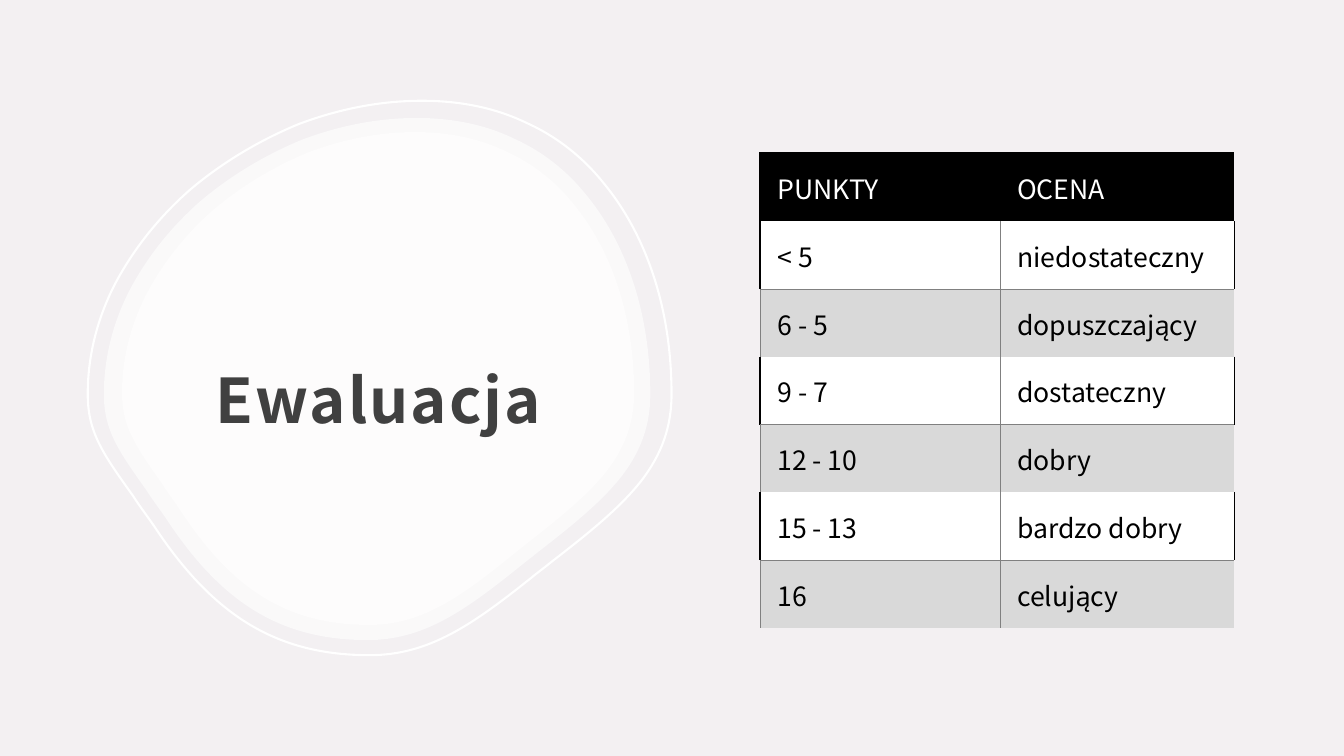
from dataclasses import dataclass

from lxml import etree
from pptx import Presentation
from pptx.dml.color import RGBColor
from pptx.enum.shapes import MSO_SHAPE
from pptx.enum.text import MSO_ANCHOR, PP_ALIGN
from pptx.oxml.ns import qn
from pptx.util import Inches, Pt

RECTANGLE = MSO_SHAPE.RECTANGLE
MIDDLE, TOP, BOTTOM = MSO_ANCHOR.MIDDLE, MSO_ANCHOR.TOP, MSO_ANCHOR.BOTTOM
CENTER, LEFT = PP_ALIGN.CENTER, PP_ALIGN.LEFT
NO_STYLE = "{2D5ABB26-0587-4C30-8999-92F81FD0307C}"


@dataclass(frozen=True)
class Theme:
    font: str = "Noto Sans CJK JP"
    background: str = "F3F0F2"
    white: str = "FFFFFF"
    black: str = "000000"
    title: str = "404040"
    band: str = "D9D9D9"
    grid: str = "808080"
    title_size: float = 44
    table_size: float = 19
    outline: float = 1.5
    hairline: float = 0.5


THEME = Theme()

SLIDE_SIZE = (13.33, 7.5)
BLOB_SIZE = (5.8, 5.5)
BLOB_START = (3.32, 0)
BLOB_CURVES = [
    ((3.7, 0), (4.05, 0.07), (4.36, 0.22)),
    ((4.65, 0.35), (4.91, 0.55), (5.12, 0.81)),
    ((5.56, 1.34), (5.8, 2.08), (5.8, 2.91)),
    ((5.8, 3.24), (5.7, 3.51), (5.5, 3.77)),
    ((5.28, 4.05), (4.95, 4.31), (4.6, 4.58)),
    ((4.54, 4.63), (4.47, 4.68), (4.41, 4.73)),
    ((3.82, 5.2), (3.39, 5.5), (2.8, 5.5)),
    ((1.9, 5.5), (1.27, 5.13), (0.68, 4.25)),
    ((0.6, 4.13), (0.52, 4.03), (0.45, 3.92)),
    ((0.15, 3.5), (0, 3.29), (0, 2.91)),
    ((0, 2.54), (0.09, 2.17), (0.27, 1.82)),
    ((0.45, 1.48), (0.7, 1.16), (1.02, 0.88)),
    ((1.34, 0.61), (1.71, 0.39), (2.1, 0.23)),
    ((2.5, 0.08), (2.91, 0), BLOB_START),
]

GRADES = [
    ("PUNKTY", "OCENA"),
    ("< 5", "niedostateczny"),
    ("6 - 5", "dopuszczający"),
    ("9 - 7", "dostateczny"),
    ("12 - 10", "dobry"),
    ("15 - 13", "bardzo dobry"),
    ("16", "celujący"),
]

THICK = (THEME.black, THEME.outline)
EDGE = (THEME.black, THEME.hairline)
THIN = (THEME.grid, THEME.hairline)
HEADER = dict(fill=THEME.black, color=THEME.white, anchor=MIDDLE,
              borders=(dict(L=THICK, T=THICK), dict(T=THICK)))
PLAIN = dict(fill=THEME.white, color=THEME.black, anchor=TOP,
             borders=(dict(L=THICK, R=THIN, B=THIN), dict(L=THIN, R=EDGE, B=THIN)))
BANDED = dict(fill=THEME.band, color=THEME.black, anchor=TOP,
              borders=(dict(L=THIN, R=THIN, T=THIN), dict(L=THIN, T=THIN)))


def rgb(value):
    return RGBColor.from_string(value)


def set_attrs(obj, values):
    for name, value in values.items():
        setattr(obj, name, value)


def paint(fill, color):
    fill.solid()
    fill.fore_color.rgb = rgb(color)


def write_text(tf, text, size, color, bold=False, **paragraph):
    p = tf.paragraphs[0]
    set_attrs(p, paragraph)
    r = p.add_run()
    r.text = text
    set_attrs(r.font, dict(name=THEME.font, size=Pt(size), bold=bold))
    r.font.color.rgb = rgb(color)
    return r


def add_backdrop(slide, box):
    sp = slide.shapes.add_shape(RECTANGLE, *map(Inches, box))
    sp.shadow.inherit = False
    paint(sp.fill, THEME.background)
    sp.line.fill.background()


def add_blob(slide, box, opacity=None):
    x, y, w, h = box

    def scaled(point):
        return Inches(point[0] * w / BLOB_SIZE[0]), Inches(point[1] * h / BLOB_SIZE[1])

    builder = slide.shapes.build_freeform(*scaled(BLOB_START))
    builder.add_line_segments([scaled(curve[-1]) for curve in BLOB_CURVES], close=True)
    sp = builder.convert_to_shape(Inches(x), Inches(y))
    for line, curve in zip(list(sp._element.iter(qn("a:lnTo"))), BLOB_CURVES):
        bezier = etree.Element(qn("a:cubicBezTo"))
        for px, py in map(scaled, curve):
            etree.SubElement(bezier, qn("a:pt"), x=str(px), y=str(py))
        line.getparent().replace(line, bezier)
    sp.shadow.inherit = False
    if opacity is None:
        sp.fill.background()
        sp.line.color.rgb = rgb(THEME.white)
        sp.line.width = Pt(THEME.outline)
    else:
        paint(sp.fill, THEME.white)
        color = sp._element.spPr.find(qn("a:solidFill")).find(qn("a:srgbClr"))
        etree.SubElement(color, qn("a:alpha"), val=str(opacity * 1000))
        sp.line.fill.background()


def add_title_badge(slide, box, text):
    x, y, w, h = box
    add_blob(slide, (x + 0.16, y + 0.17, 5.42, 5.18), opacity=60)
    add_blob(slide, box)
    add_blob(slide, (x + 0.34, y + 0.31, 5.08, 4.89), opacity=60)
    sp = slide.shapes.add_textbox(Inches(x + 0.58), Inches(y + 0.84), Inches(4.61), Inches(2.58))
    tf = sp.text_frame
    set_attrs(tf, dict(word_wrap=True, vertical_anchor=BOTTOM,
                       margin_left=Inches(0.12), margin_right=Inches(0.12),
                       margin_top=Inches(0.12), margin_bottom=Inches(0.1)))
    r = write_text(tf, text, THEME.title_size, THEME.title, bold=True,
                   alignment=CENTER, line_spacing=1.2)
    r.font._element.set("spc", "150")


def set_borders(cell, borders):
    tc_pr = cell._tc.get_or_add_tcPr()
    for side in "LRTB":
        ln = etree.SubElement(tc_pr, qn("a:ln" + side))
        if side in borders:
            color, width = borders[side]
            ln.set("w", str(Pt(width)))
            fill = etree.SubElement(ln, qn("a:solidFill"))
            etree.SubElement(fill, qn("a:srgbClr"), val=color)
        else:
            etree.SubElement(ln, qn("a:noFill"))


def add_grade_table(slide, box, rows):
    x, y, w, h = map(Inches, box)
    table = slide.shapes.add_table(len(rows), 2, x, y, w, h).table
    table._tbl.tblPr.find(qn("a:tableStyleId")).text = NO_STYLE
    for column, width in zip(table.columns, (2.38, 2.32)):
        column.width = Inches(width)
    for i, row in enumerate(rows):
        style = HEADER if i == 0 else PLAIN if i % 2 else BANDED
        for j, text in enumerate(row):
            cell = table.cell(i, j)
            set_attrs(cell, dict(vertical_anchor=style["anchor"],
                                 margin_left=Inches(0.17), margin_right=Inches(0.1),
                                 margin_top=Inches(0.13), margin_bottom=Inches(0.13)))
            set_borders(cell, style["borders"][j])
            paint(cell.fill, style["fill"])
            write_text(cell.text_frame, text, THEME.table_size, style["color"],
                       alignment=LEFT, line_spacing=1.06, space_after=Pt(8))


def main():
    prs = Presentation()
    width, height = SLIDE_SIZE
    set_attrs(prs, dict(slide_width=Inches(width), slide_height=Inches(height)))
    slide = prs.slides.add_slide(prs.slide_layouts[6])
    paint(slide.background.fill, THEME.background)
    add_backdrop(slide, (0, 0, width, height))
    add_title_badge(slide, (0.87, 1, 5.79, 5.5), "Ewaluacja")
    add_grade_table(slide, (7.54, 1.52, 4.7, 4.71), GRADES)
    prs.save("out.pptx")


if __name__ == "__main__":
    main()
